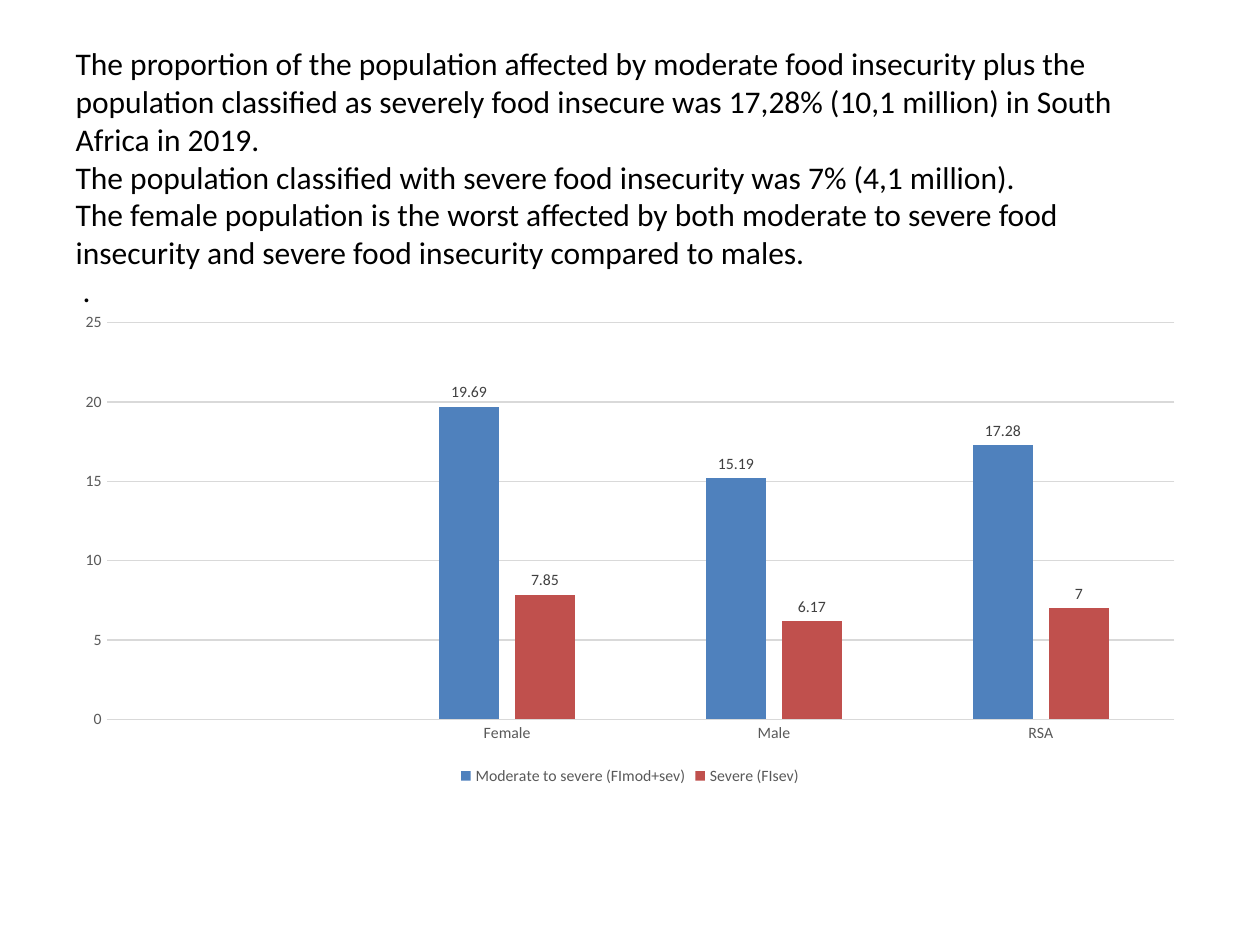
"""Builds a slide on food insecurity in South Africa by sex."""
import pptx
import pptx.chart.data
import pptx.dml.color
import pptx.enum.chart
import pptx.enum.text
import pptx.util

Pt = pptx.util.Pt
RGBColor = pptx.dml.color.RGBColor

FONT = "Calibri"
BLACK = RGBColor(0x00, 0x00, 0x00)
GREY = RGBColor(0x59, 0x59, 0x59)
LABEL_GREY = RGBColor(0x40, 0x40, 0x40)
RULE_GREY = RGBColor(0xD9, 0xD9, 0xD9)
BLUE = RGBColor(0x4F, 0x81, 0xBD)
RED = RGBColor(0xC0, 0x50, 0x4D)

MARGIN = Pt(36)
CONTENT_WIDTH = Pt(648)

FINDINGS = (
    "The proportion of the population affected by moderate food insecurity plus the "
    "population classified as severely food insecure was 17,28% (10,1 million) in South "
    "Africa in 2019. ",
    "The population classified with severe food insecurity was 7% (4,1 million).",
    "The female population is the worst affected by both moderate to severe food "
    "insecurity and severe food insecurity compared to males.",
    " .",
)
GROUPS = ("", "Female", "Male", "RSA")
INSECURITY = (
    ("Moderate to severe (FImod+sev)", (None, 19.69, 15.19, 17.28), BLUE),
    ("Severe (FIsev)", (None, 7.85, 6.17, 7), RED),
)


def format_font(font, size, color):
    font.name = FONT
    font.size = Pt(size)
    font.bold = False
    font.color.rgb = color


def write_text(frame, text, *, size, color, align, anchor):
    frame.word_wrap = True
    frame.auto_size = pptx.enum.text.MSO_AUTO_SIZE.NONE
    frame.vertical_anchor = anchor
    paragraph = frame.paragraphs[0]
    paragraph.text = text
    paragraph.alignment = align
    for run in paragraph.runs:
        format_font(run.font, size, color)


def format_rule(line):
    line.color.rgb = RULE_GREY
    line.width = Pt(0.75)


def add_findings(slide):
    title = slide.shapes.title
    title.left, title.top = MARGIN, Pt(21.6)
    title.width, title.height = CONTENT_WIDTH, Pt(140.4)
    write_text(title.text_frame, "\v".join(FINDINGS), size=18, color=BLACK,
               align=pptx.enum.text.PP_ALIGN.LEFT,
               anchor=pptx.enum.text.MSO_ANCHOR.TOP)


def format_axes(chart):
    for axis in (chart.category_axis, chart.value_axis):
        axis.major_tick_mark = pptx.enum.chart.XL_TICK_MARK.NONE
        axis.minor_tick_mark = pptx.enum.chart.XL_TICK_MARK.NONE
        format_font(axis.tick_labels.font, 9, GREY)
    format_rule(chart.category_axis.format.line)
    percent_axis = chart.value_axis
    percent_axis.minimum_scale = 0
    percent_axis.maximum_scale = 25
    percent_axis.major_unit = 5
    percent_axis.format.line.fill.background()
    format_rule(percent_axis.major_gridlines.format.line)


def format_series(series, color):
    series.format.fill.solid()
    series.format.fill.fore_color.rgb = color
    series.invert_if_negative = False
    labels = series.data_labels
    labels.show_value = True
    labels.position = pptx.enum.chart.XL_LABEL_POSITION.OUTSIDE_END
    format_font(labels.font, 9, LABEL_GREY)


def add_insecurity_chart(slide):
    data = pptx.chart.data.CategoryChartData()
    data.categories = GROUPS
    for name, values, _ in INSECURITY:
        data.add_series(name, values)
    chart = slide.shapes.add_chart(
        pptx.enum.chart.XL_CHART_TYPE.COLUMN_CLUSTERED,
        MARGIN, Pt(173.5), CONTENT_WIDTH, Pt(278), data).chart
    format_font(chart.font, 10, BLACK)
    chart.has_title = False
    chart.has_legend = True
    chart.legend.position = pptx.enum.chart.XL_LEGEND_POSITION.BOTTOM
    chart.legend.include_in_layout = False
    format_font(chart.legend.font, 9, GREY)
    format_axes(chart)
    columns = chart.plots[0]
    columns.vary_by_categories = False
    columns.gap_width = 219
    columns.overlap = -27
    for series, (_, _, color) in zip(columns.series, INSECURITY):
        format_series(series, color)


def main():
    presentation = pptx.Presentation()
    presentation.slide_width, presentation.slide_height = Pt(720), Pt(540)
    slide = presentation.slides.add_slide(presentation.slide_layouts[5])
    add_findings(slide)
    add_insecurity_chart(slide)
    presentation.save("out.pptx")


if __name__ == "__main__":
    main()
